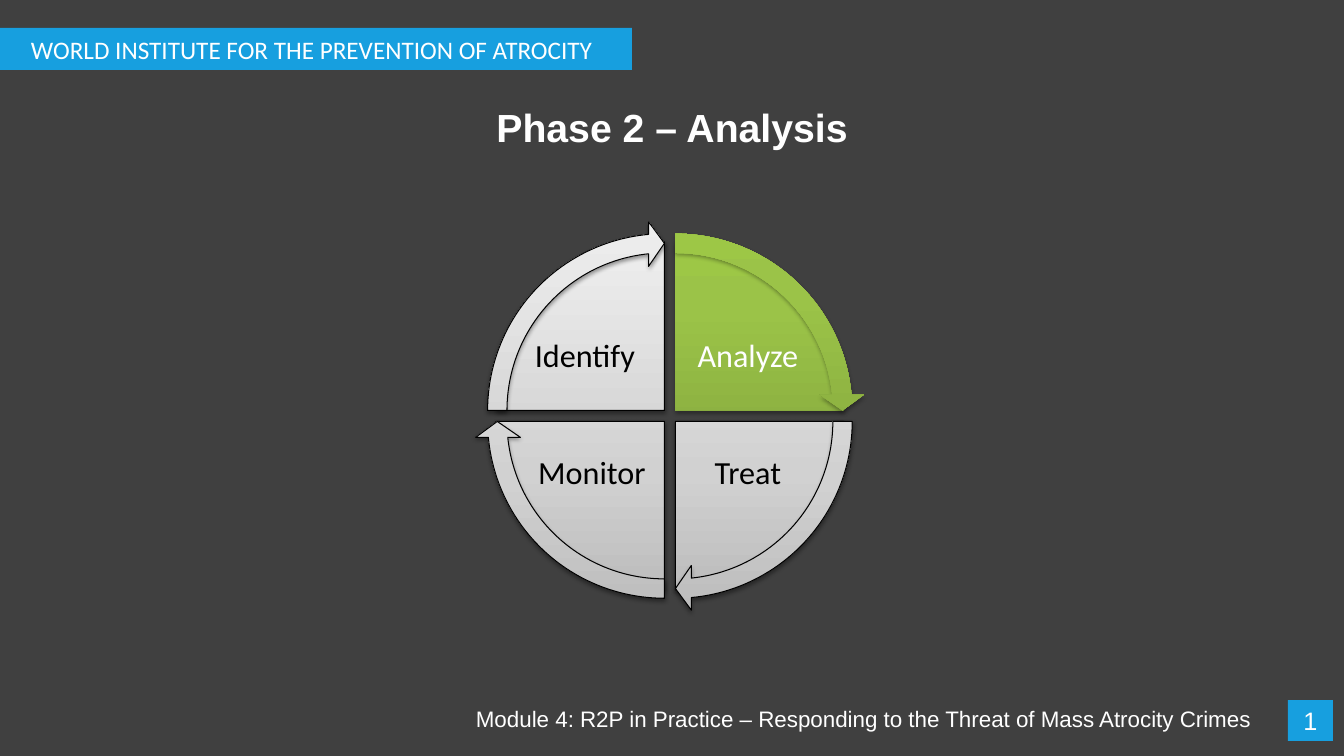
from typing import NamedTuple, Optional

from lxml.etree import SubElement
from pptx import Presentation
from pptx.dml.color import RGBColor
from pptx.enum.shapes import MSO_SHAPE as SHAPE
from pptx.enum.text import MSO_ANCHOR as ANCHOR, PP_ALIGN as ALIGN
from pptx.oxml.ns import qn
from pptx.util import Emu, Pt

SCALE = 914400 / 100.8
WHITE = RGBColor(0xFF, 0xFF, 0xFF)
BLACK = RGBColor(0x00, 0x00, 0x00)
CHARCOAL = RGBColor(0x40, 0x40, 0x40)
BLUE = RGBColor(0x17, 0x9F, 0xDF)

FULL_TURN = 216
QUARTER = 54
HEAD_ANGLE = 3.275
PIE_SIZE = 337
ARROW_SIZE = 379
ARROW_OFFSET = 21


class Look(NamedTuple):
    stops: tuple[tuple[int, RGBColor], ...]
    text: RGBColor
    line: Optional[RGBColor]
    shadow_alpha: int
    shadow_pt: float


class Phase(NamedTuple):
    label: str
    left: int
    top: int
    label_left: int
    label_top: int
    look: Look
    right_inset: int = 3


GREEN = Look(
    (
        (0, RGBColor(0x77, 0x97, 0x37)),
        (80, RGBColor(0x9B, 0xC3, 0x48)),
        (100, RGBColor(0x9D, 0xC7, 0x46)),
    ),
    WHITE, None, 35, 1.8,
)
GREY = Look(
    (
        (0, RGBColor(0xBD, 0xBD, 0xBD)),
        (35, RGBColor(0xD1, 0xD1, 0xD1)),
        (100, RGBColor(0xEE, 0xEE, 0xEE)),
    ),
    BLACK, BLACK, 38, 1.6,
)
PHASES = (
    Phase("Analyze", 507, 242, 686, 311, GREEN),
    Phase("Treat", 507, 253, 686, 428, GREY),
    Phase("Monitor", 496, 253, 530, 428, GREY),
    Phase("Identify", 496, 242, 530, 311, GREY, 17),
)


def px(n: int) -> Emu:
    return Emu(round(n * SCALE))


def write(sp, text: str, font: str, size: int, color: RGBColor,
          align=ALIGN.LEFT, bold: bool = False) -> None:
    tf = sp.text_frame
    tf.word_wrap = True
    tf.text = text
    p = tf.paragraphs[0]
    p.alignment = align
    r = p.runs[0]
    r.font.name = font
    r.font.size = Pt(size)
    r.font.bold = bold
    r.font.color.rgb = color


def add_bar(shapes, left: int, top: int, width: int, height: int):
    sp = shapes.add_shape(SHAPE.RECTANGLE, px(left), px(top), px(width), px(height))
    sp.shadow.inherit = False
    sp.fill.solid()
    sp.fill.fore_color.rgb = BLUE
    sp.line.fill.background()
    return sp


def style(sp, look: Look) -> None:
    sp.fill.gradient()
    sp.fill.gradient_angle = 90
    if look.line is None:
        sp.line.fill.background()
    else:
        sp.line.color.rgb = look.line
        sp.line.width = Pt(0.75)
    sp.shadow.inherit = False

    props = sp._element.spPr
    stops = props.find(qn("a:gradFill")).find(qn("a:gsLst"))
    stops.clear()
    for pos, color in look.stops:
        gs = SubElement(stops, qn("a:gs"), pos=str(pos * 1000))
        SubElement(gs, qn("a:srgbClr"), val=str(color))
    shadow = SubElement(
        props.find(qn("a:effectLst")), qn("a:outerShdw"),
        blurRad=str(Pt(3.1)), dist=str(Pt(look.shadow_pt)),
        dir="5400000", rotWithShape="0",
    )
    tint = SubElement(shadow, qn("a:srgbClr"), val=str(BLACK))
    SubElement(tint, qn("a:alpha"), val=str(look.shadow_alpha * 1000))


def add_round(shapes, kind, left: int, top: int, size: int,
              adjustments: tuple[float, ...], look: Look) -> None:
    sp = shapes.add_shape(kind, px(left), px(top), px(size), px(size))
    for i, value in enumerate(adjustments):
        sp.adjustments[i] = value
    style(sp, look)


def add_label(shapes, phase: Phase) -> None:
    sp = shapes.add_textbox(px(phase.label_left), px(phase.label_top), px(124), px(92))
    write(sp, phase.label, "Calibri", 23, phase.look.text, ALIGN.CENTER)
    tf = sp.text_frame
    tf.vertical_anchor = ANCHOR.MIDDLE
    tf.margin_left = tf.margin_top = tf.margin_bottom = px(3)
    tf.margin_right = px(phase.right_inset)
    tf.paragraphs[0].line_spacing = 0.9


def add_cycle(s) -> None:
    shapes = s.shapes.add_group_shape().shapes
    starts = [(162 + QUARTER * i) % FULL_TURN for i in range(len(PHASES))]
    for phase, start in zip(PHASES, starts):
        end = (start + QUARTER) % FULL_TURN
        add_round(shapes, SHAPE.PIE, phase.left, phase.top, PIE_SIZE,
                  (start, end), phase.look)
        add_label(shapes, phase)
    for phase, start in zip(PHASES, starts):
        tip = start + QUARTER - HEAD_ANGLE
        add_round(shapes, SHAPE.CIRCULAR_ARROW, phase.left - ARROW_OFFSET,
                  phase.top - ARROW_OFFSET, ARROW_SIZE,
                  (0.051, HEAD_ANGLE, tip, start, 0.059), phase.look)


def add_footer(s) -> None:
    shapes = s.shapes.add_group_shape().shapes
    sp = shapes.add_textbox(px(466), px(700), px(810), px(37))
    write(sp, "Module 4: R2P in Practice – Responding to the Threat of Mass Atrocity Crimes",
          "Arial", 16, WHITE)
    sp = add_bar(shapes, 1288, 700, 45, 41)
    write(sp, "1", "Arial", 18, WHITE, ALIGN.CENTER)


def main() -> None:
    prs = Presentation()
    prs.slide_width, prs.slide_height = px(1344), px(756)
    s = prs.slides.add_slide(prs.slide_layouts[5])
    s.background.fill.solid()
    s.background.fill.fore_color.rgb = CHARCOAL

    title = s.shapes.title
    title.left, title.top = px(134), px(63)
    title.width, title.height = px(1076), px(127)
    write(title, "Phase 2 – Analysis", "Arial", 28, WHITE, ALIGN.CENTER, True)
    title.text_frame.vertical_anchor = ANCHOR.MIDDLE

    add_cycle(s)
    banner = add_bar(s.shapes, 0, 28, 632, 42)
    write(banner, "WORLD INSTITUTE FOR THE PREVENTION OF ATROCITY", "Calibri", 18, WHITE)
    banner.text_frame.margin_left = px(31)
    add_footer(s)
    prs.save("out.pptx")


if __name__ == "__main__":
    main()
